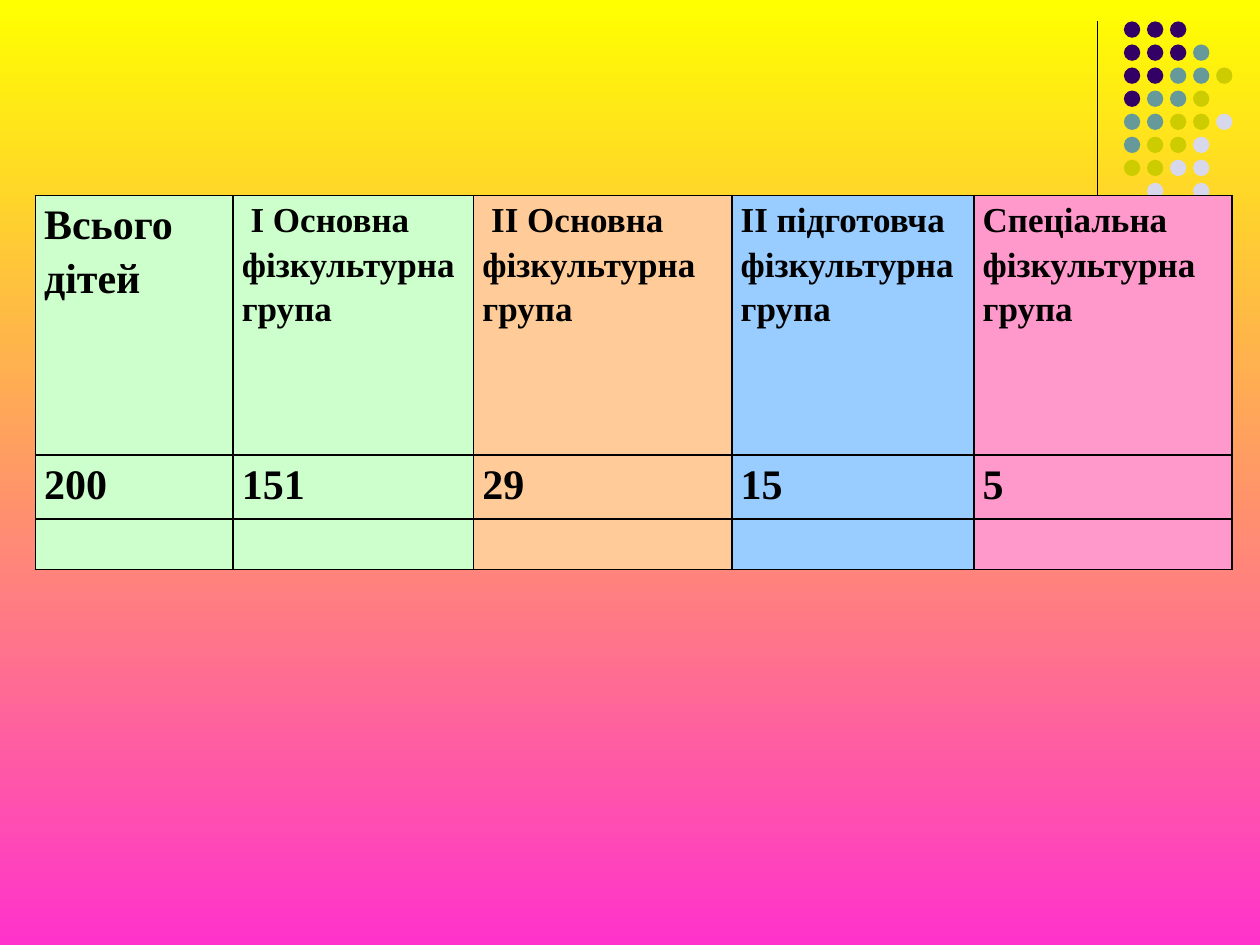
from lxml import etree
from pptx import Presentation
from pptx import util as u
from pptx.dml.color import RGBColor
from pptx.enum import shapes, text
from pptx.oxml import ns

BLACK = RGBColor(0x00, 0x00, 0x00)
YELLOW = RGBColor(0xFF, 0xFF, 0x00)
MAGENTA = RGBColor(0xFF, 0x33, 0xCC)
GREEN = RGBColor(0xCC, 0xFF, 0xCC)
ORANGE = RGBColor(0xFF, 0xCC, 0x99)
BLUE = RGBColor(0x99, 0xCC, 0xFF)
PINK = RGBColor(0xFF, 0x99, 0xCC)

DOT_COLORS = {
    "p": RGBColor(0x33, 0x00, 0x66),
    "t": RGBColor(0x66, 0x99, 0x99),
    "o": RGBColor(0xCC, 0xCC, 0x00),
    "l": RGBColor(0xD8, 0xD8, 0xEC),
}
# One letter per dot, a point where the grid is empty
DOT_ROWS = ["ppp", "pppt", "pptto", "ptto", "ttool", "tool", "ooll", ".l.l"]
DOT_LEFT, DOT_TOP, DOT_PITCH, DOT_SIZE = 8.92, 0.17, 0.183, 0.13

COLUMN_WIDTHS = [1.57, 1.91, 2.05, 1.92, 2.05]
ROW_HEIGHTS = [2.06, 0.51, 0.4]
COLUMN_FILLS = [GREEN, GREEN, ORANGE, BLUE, PINK]
GROUP_LINES = "\nфізкультурна\nгрупа"
HEADERS = ["Всього дітей"] + [
    name + GROUP_LINES
    for name in (" І Основна ", " ІІ Основна ", "ІІ підготовча ", "Спеціальна")
]
COUNTS = ["200", "151", "29", "15", "5"]

LARGE = {"name": "Times New Roman", "size": u.Pt(24), "bold": True}
SMALL = {**LARGE, "size": u.Pt(20)}
MARGINS = {"margin_left": u.Inches(0.07), "margin_right": u.Inches(0.07),
           "margin_top": 0, "margin_bottom": 0}


def set_values(target, values):
    for name, value in values.items():
        setattr(target, name, value)


def paint_background(slide):
    fill = slide.background.fill
    fill.gradient()
    fill.gradient_angle = 270
    for stop, color in zip(fill.gradient_stops, (YELLOW, MAGENTA)):
        stop.color.rgb = color


def add_rule(slide, x, top, bottom):
    rule = slide.shapes.add_connector(
        shapes.MSO_CONNECTOR.STRAIGHT,
        *(u.Inches(value) for value in (x, top, x, bottom)))
    rule.line.color.rgb = BLACK
    rule.line.width = u.Pt(0.75)
    etree.SubElement(rule.element.spPr, ns.qn("a:effectLst"))


def add_dots(slide):
    group = slide.shapes.add_group_shape()
    size = u.Inches(DOT_SIZE)
    for row, letters in enumerate(DOT_ROWS):
        for column, letter in enumerate(letters):
            if letter not in DOT_COLORS:
                continue
            dot = group.shapes.add_shape(
                shapes.MSO_SHAPE.OVAL,
                u.Inches(DOT_LEFT + column * DOT_PITCH),
                u.Inches(DOT_TOP + row * DOT_PITCH), size, size)
            dot.shadow.inherit = False
            dot.fill.solid()
            dot.fill.fore_color.rgb = DOT_COLORS[letter]
            dot.line.fill.background()


def add_borders(cell):
    properties = cell._tc.get_or_add_tcPr()
    for side in ("lnL", "lnR", "lnT", "lnB"):
        line = etree.SubElement(properties, ns.qn("a:" + side), w=str(u.Pt(1)))
        fill = etree.SubElement(line, ns.qn("a:solidFill"))
        etree.SubElement(fill, ns.qn("a:srgbClr"), val=str(BLACK))


def format_cell(cell, content, color, font):
    set_values(cell, MARGINS)
    add_borders(cell)
    cell.fill.solid()
    cell.fill.fore_color.rgb = color
    if not content:
        return
    cell.text = content
    for paragraph in cell.text_frame.paragraphs:
        paragraph.alignment = text.PP_ALIGN.JUSTIFY
        paragraph.line_spacing = 1.15
        for run in paragraph.runs:
            set_values(run.font, font)
            run.font.color.rgb = BLACK


def add_group_table(slide):
    rows = [HEADERS, COUNTS, [""] * len(COUNTS)]
    table = slide.shapes.add_table(
        len(rows), len(COUNTS), u.Inches(0.28), u.Inches(1.55),
        u.Inches(sum(COLUMN_WIDTHS)), u.Inches(sum(ROW_HEIGHTS))).table
    set_values(table, {"first_row": False, "horz_banding": False})
    for column, width in zip(table.columns, COLUMN_WIDTHS):
        column.width = u.Inches(width)
    for row, height in zip(table.rows, ROW_HEIGHTS):
        row.height = u.Inches(height)
    for r, contents in enumerate(rows):
        for c, content in enumerate(contents):
            font = SMALL if GROUP_LINES in content else LARGE
            format_cell(table.cell(r, c), content, COLUMN_FILLS[c], font)


def main():
    presentation = Presentation()
    presentation.slide_width = u.Inches(10)
    presentation.slide_height = u.Inches(7.5)
    slide = presentation.slides.add_slide(presentation.slide_layouts[6])
    paint_background(slide)

    # Corner ornament, partly behind the table
    add_rule(slide, 8.71, 0.17, 1.83)
    add_dots(slide)

    # Children by physical education group
    add_group_table(slide)
    presentation.save("out.pptx")


if __name__ == "__main__":
    main()
